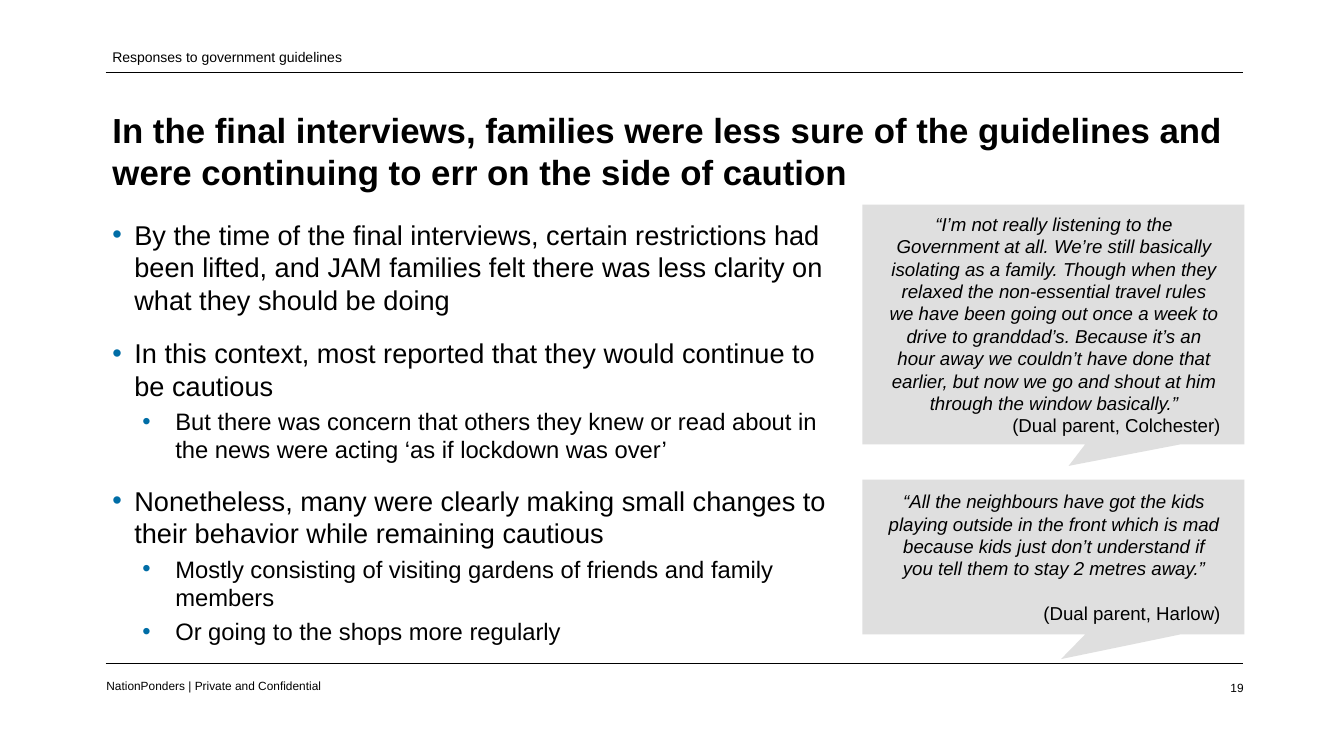
from lxml.etree import SubElement
from pptx import Presentation
from pptx.dml.color import RGBColor
from pptx.enum.shapes import MSO_CONNECTOR, MSO_SHAPE
from pptx.enum.text import MSO_ANCHOR as Anchor, MSO_AUTO_SIZE, PP_ALIGN as Align
from pptx.oxml.ns import qn
from pptx.util import Inches, Pt

BLACK = RGBColor(0x00, 0x00, 0x00)
BLUE = RGBColor(0x00, 0x6D, 0xA6)
GREY = RGBColor(0xDF, 0xDF, 0xDF)

TITLE = ("In the final interviews, families were less sure of the guidelines and "
         "were continuing to err on the side of caution")
SECTION = "Responses to government guidelines"
FOOTER = "NationPonders | Private and Confidential"
PAGE = "19"
BULLETS = [
    (0, "By the time of the final interviews, certain restrictions had been lifted, "
        "and JAM families felt there was less clarity on what they should be doing"),
    (0, "In this context, most reported that they would continue to be cautious"),
    (1, "But there was concern that others they knew or read about in the news "
        "were acting ‘as if lockdown was over’"),
    (0, "Nonetheless, many were clearly making small changes to their behavior "
        "while remaining cautious"),
    (1, "Mostly consisting of visiting gardens of friends and family members"),
    (1, "Or going to the shops more regularly"),
]
QUOTES = [
    {"text": "“I’m not really listening to the Government at all. We’re still basically "
             "isolating as a family. Though when they relaxed the non-essential travel "
             "rules we have been going out once a week to drive to granddad’s. Because "
             "it’s an hour away we couldn’t have done that earlier, but now we go and "
             "shout at him through the window basically.”",
     "speaker": "(Dual parent, Colchester)", "gap": 0,
     "top": 3.35, "height": 3.92, "tail": (0.04, 0.59)},
    {"text": "“All the neighbours have got the kids playing outside in the front which "
             "is mad because kids just don’t understand if you tell them to stay 2 "
             "metres away.”",
     "speaker": "(Dual parent, Harlow)", "gap": 26,
     "top": 7.85, "height": 2.53, "tail": (0.02, 0.66)},
]

LEFT = 1.74
RULE_ENDS = (1.73, 20.33)
RULE_HEIGHTS = (1.18, 10.85)
FOOTER_TOP = 11.13
QUOTE_LEFT, QUOTE_WIDTH = 14.11, 6.25
LEVELS = [
    {"size": 32, "margin": 0.36, "indent": -0.36, "before": 18},
    {"size": 28, "margin": 1.03, "indent": -0.54, "before": 0},
]


def set_values(target, values):
    """Set each attribute named in values on the target."""
    for name, value in values.items():
        setattr(target, name, value)


def write(paragraph, text, size, font=None, **layout):
    """Write one formatted run into a paragraph."""
    set_values(paragraph, {"alignment": Align.LEFT, "line_spacing": 1.0, **layout})
    run = paragraph.add_run()
    run.text = text
    set_values(run.font, {"name": "Arial", "size": Pt(size), **(font or {})})
    run.font.color.rgb = BLACK


def set_frame(shape, anchor, inset_x, inset_y):
    """Prepare a wrapped text frame and return it."""
    frame = shape.text_frame
    set_values(frame, {
        "word_wrap": True, "auto_size": MSO_AUTO_SIZE.NONE, "vertical_anchor": anchor,
        "margin_left": Inches(inset_x), "margin_right": Inches(inset_x),
        "margin_top": Inches(inset_y), "margin_bottom": Inches(inset_y)})
    return frame


def add_text_box(slide, box, anchor=Anchor.TOP, inset_x=0, inset_y=0):
    """Add a text box and return its frame."""
    return set_frame(slide.shapes.add_textbox(*map(Inches, box)), anchor, inset_x, inset_y)


def add_rule(slide, height):
    """Draw a thin horizontal rule across the slide."""
    start, end = map(Inches, RULE_ENDS)
    rule = slide.shapes.add_connector(
        MSO_CONNECTOR.STRAIGHT, start, Inches(height), end, Inches(height))
    rule.line.color.rgb = BLACK
    rule.line.width = Pt(0.75)
    SubElement(rule._element.spPr, qn("a:effectLst"))


def add_title(slide):
    """Place and fill the title placeholder."""
    title = slide.shapes.title
    set_values(title, dict(zip(("left", "top", "width", "height"),
                               map(Inches, (LEFT, 1.73, 18.61, 1.54)))))
    frame = set_frame(title, Anchor.TOP, 0.1, 0.05)
    write(frame.paragraphs[0], TITLE, 41, {"bold": True})


def add_bullets(slide):
    """Add the two-level bullet list."""
    frame = add_text_box(slide, (LEFT, 3.52, 12.08, 6.95), inset_x=0.1, inset_y=0.05)
    for index, (level, text) in enumerate(BULLETS):
        style = LEVELS[level]
        paragraph = frame.add_paragraph() if index else frame.paragraphs[0]
        write(paragraph, text, style["size"], level=level,
              space_before=Pt(style["before"] if index else 0), space_after=Pt(6))
        properties = paragraph._p.get_or_add_pPr()
        properties.set("marL", str(Inches(style["margin"])))
        properties.set("indent", str(Inches(style["indent"])))
        color = SubElement(properties, qn("a:buClr"))
        SubElement(color, qn("a:srgbClr"), val=str(BLUE))
        SubElement(properties, qn("a:buFont"), typeface="Arial")
        SubElement(properties, qn("a:buChar"), char="•")


def add_quote(slide, quote):
    """Add one speech callout with its speaker."""
    callout = slide.shapes.add_shape(
        MSO_SHAPE.RECTANGULAR_CALLOUT,
        *map(Inches, (QUOTE_LEFT, quote["top"], QUOTE_WIDTH, quote["height"])))
    callout.shadow.inherit = False
    callout.fill.solid()
    callout.fill.fore_color.rgb = GREY
    callout.line.fill.background()
    for index, value in enumerate(quote["tail"]):
        callout.adjustments[index] = value
    frame = set_frame(callout, Anchor.MIDDLE, 0.39, 0.39)
    frame.margin_left = Inches(0.41)
    write(frame.paragraphs[0], quote["text"], 22, {"italic": True}, alignment=Align.CENTER)
    write(frame.add_paragraph(), quote["speaker"], 22, alignment=Align.RIGHT,
          space_before=Pt(quote["gap"]))


def main():
    """Build the slide and save it."""
    presentation = Presentation()
    presentation.slide_width = Inches(21.99)
    presentation.slide_height = Inches(12.37)
    slide = presentation.slides.add_slide(presentation.slide_layouts[5])
    for height in RULE_HEIGHTS:
        add_rule(slide, height)
    add_title(slide)
    add_bullets(slide)
    for quote in QUOTES:
        add_quote(slide, quote)
    section = add_text_box(slide, (LEFT, 0.77, 10.33, 0.33), Anchor.MIDDLE, 0.1, 0.05)
    write(section.paragraphs[0], SECTION, 16.5)
    footer = add_text_box(slide, (LEFT, FOOTER_TOP, 4.51, 0.33))
    write(footer.paragraphs[0], FOOTER, 14, line_spacing=Pt(15.2))
    page = add_text_box(slide, (19.74, FOOTER_TOP, 0.61, 0.33))
    write(page.paragraphs[0], PAGE, 14, alignment=Align.RIGHT)
    presentation.save("out.pptx")


if __name__ == "__main__":
    main()
